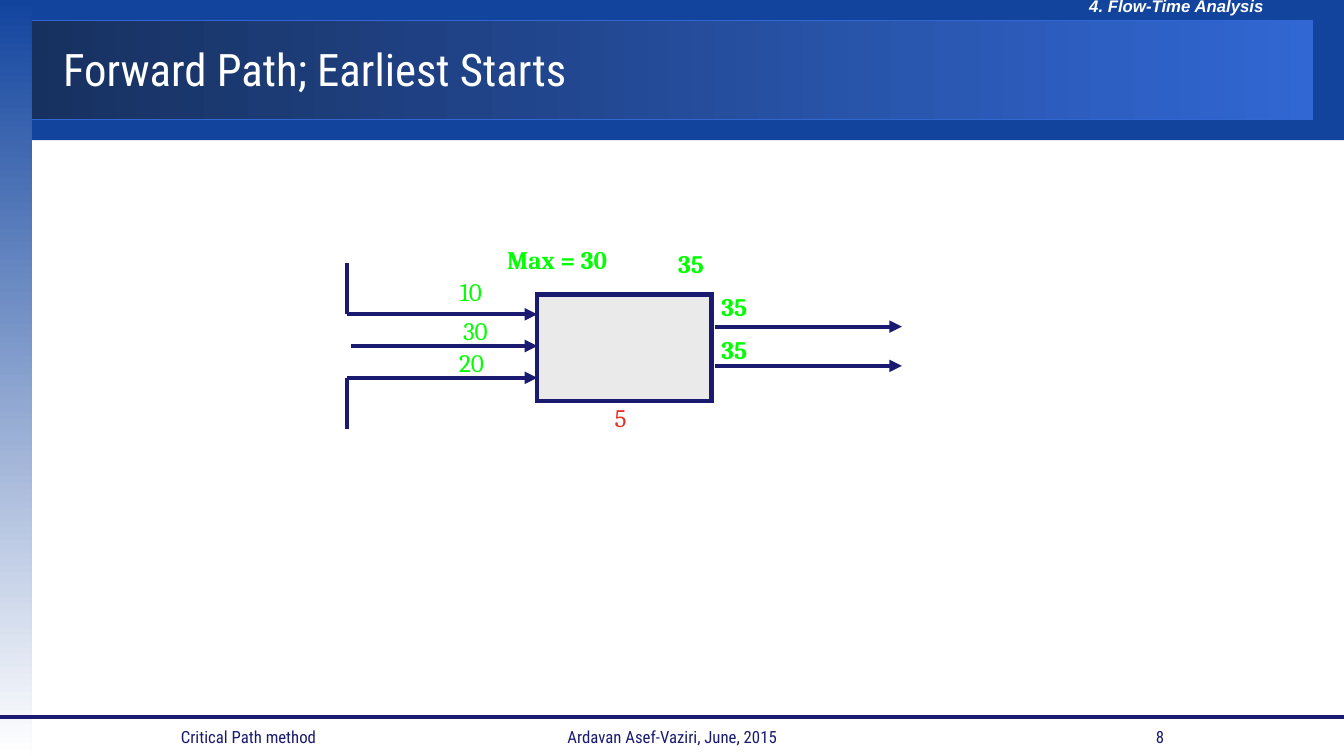
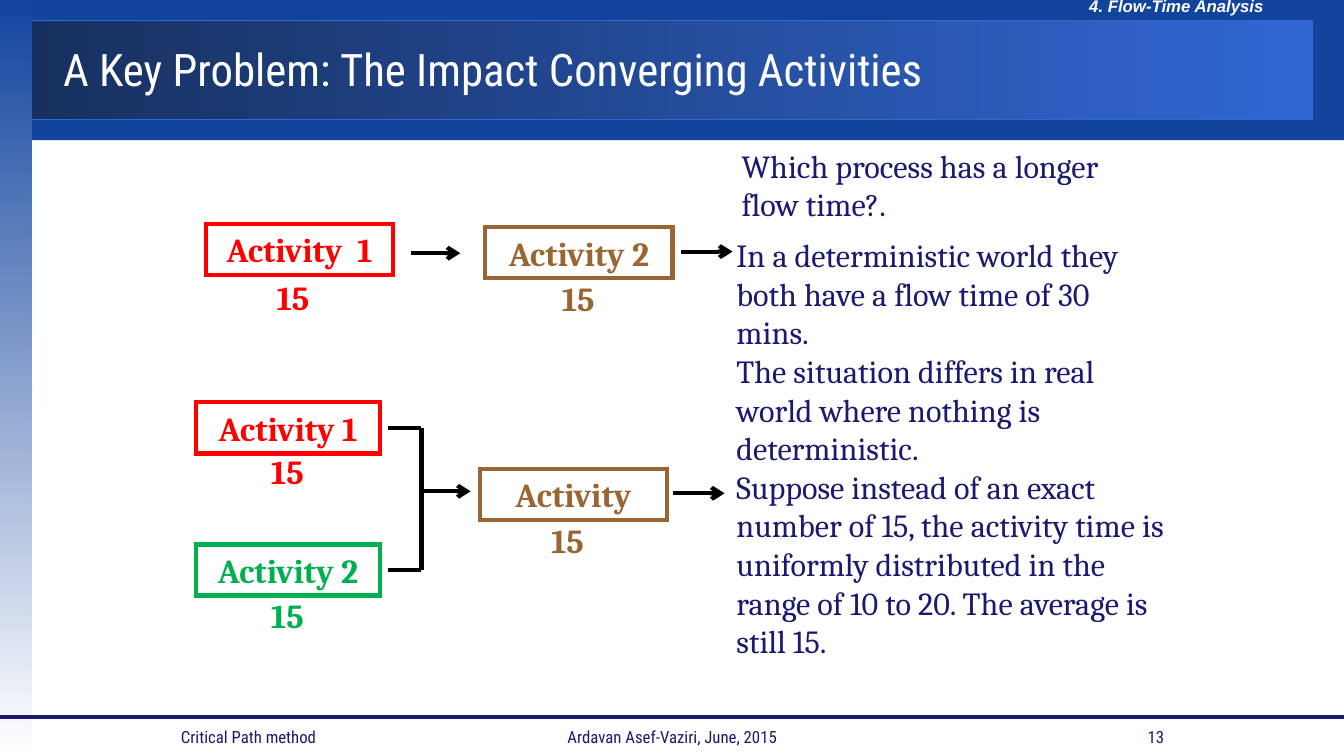
from lxml.etree import SubElement
from pptx import Presentation
from pptx.dml.color import RGBColor
from pptx.enum.shapes import MSO_CONNECTOR as Connector, MSO_SHAPE as Shape
from pptx.enum.text import MSO_ANCHOR as Anchor, PP_ALIGN as Align
from pptx.oxml.ns import qn
from pptx.util import Cm, Pt

SLIDE_WIDTH, SLIDE_HEIGHT = 33.87, 19.05

COLOURS = {
    "white": "FFFFFF",
    "black": "000000",
    "navy": "1A1A70",
    "band": "12449E",
    "title dark": "17305F",
    "title light": "3167D3",
    "box grey": "EAEAEA",
    "lime": "00FF00",
    "scarlet": "E72F21",
    "red": "FF0000",
    "brown": "996633",
    "green": "00B050",
}

STYLES = {
    "title": {"name": "Roboto Condensed", "size": Pt(32)},
    "course": {"name": "Arial", "size": Pt(12), "bold": True, "italic": True},
    "footer": {"name": "Roboto Condensed", "size": Pt(12)},
    "time": {"name": "Cambria", "size": Pt(18)},
    "strong time": {"name": "Cambria", "size": Pt(18), "bold": True},
    "activity": {"name": "Cambria", "size": Pt(24), "bold": True},
    "body": {"name": "Cambria", "size": Pt(23)},
}


def colour(name):
    return RGBColor.from_string(COLOURS[name])


# Building blocks

def write(shape, lines, style, ink, align=Align.LEFT, anchor=Anchor.TOP,
          wrap=True, gap=0):
    frame = shape.text_frame
    frame.word_wrap = wrap
    frame.vertical_anchor = anchor
    for index, line in enumerate(lines):
        paragraph = frame.paragraphs[0] if index == 0 else frame.add_paragraph()
        paragraph.alignment = align
        if index:
            paragraph.space_before = Pt(gap)
        run = paragraph.add_run()
        run.text = line
        for attribute, value in STYLES[style].items():
            setattr(run.font, attribute, value)
        run.font.color.rgb = colour(ink)


def add_text(slide, box, lines, style, ink, **options):
    shape = slide.shapes.add_textbox(*map(Cm, box))
    write(shape, lines, style, ink, **options)


def add_box(slide, box, fill=None, gradient=None, angle=0, line=None, width=3):
    shape = slide.shapes.add_shape(Shape.RECTANGLE, *map(Cm, box))
    shape.shadow.inherit = False
    if gradient:
        shape.fill.gradient()
        shape.fill.gradient_angle = angle
        for stop, name in zip(shape.fill.gradient_stops, gradient):
            stop.color.rgb = colour(name)
    elif fill:
        shape.fill.solid()
        shape.fill.fore_color.rgb = colour(fill)
    else:
        shape.fill.background()
    if line:
        shape.line.color.rgb = colour(line)
        shape.line.width = Pt(width)
        # Square corners
        outline = shape.element.spPr.find(qn("a:ln"))
        SubElement(outline, qn("a:miter"), lim="800000")
    else:
        shape.line.fill.background()
    return shape


def add_line(slide, start, end, ink, head=None):
    line = slide.shapes.add_connector(
        Connector.STRAIGHT, *map(Cm, (*start, *end)))
    line.line.color.rgb = colour(ink)
    line.line.width = Pt(3)
    properties = line.element.spPr
    if head:
        SubElement(properties.find(qn("a:ln")), qn("a:tailEnd"), type=head)
    SubElement(properties, qn("a:effectLst"))


# Parts shared by every slide

def add_frame(slide, title, number):
    # Header bands and side strip
    add_box(slide, (0.66, 0, 33.21, 3.53), fill="band")
    add_box(slide, (0.66, 0.52, 32.41, 2.5),
            gradient=("title dark", "title light"), line="title light", width=0.75)
    add_box(slide, (0, 0, 0.8, SLIDE_HEIGHT),
            gradient=("band", "white"), angle=270)
    add_text(slide, (27.2, -0.23, 6.6, 0.76), ["4. Flow-Time Analysis"],
             "course", "white")
    add_text(slide, (1.34, 0.53, 31.47, 2.39), [title], "title", "white",
             anchor=Anchor.MIDDLE)
    # Footer
    footer_top = 18.06
    add_line(slide, (0, footer_top), (SLIDE_WIDTH, footer_top), "navy")
    for left, width, text, align in (
        (4.31, 5.92, "Critical Path method", Align.LEFT),
        (12.92, 8.05, "Ardavan Asef-Vaziri, June, 2015", Align.CENTER),
        (23.67, 5.92, number, Align.RIGHT),
    ):
        add_text(slide, (left, footer_top, width, 1.02), [text], "footer",
                 "navy", align=align, anchor=Anchor.MIDDLE)


# Earliest start: three inputs, one activity, two outputs

def add_earliest_start(slide, left, top):
    def at(x, y):
        return left + x, top + y

    add_box(slide, (*at(4.8, 1.4), 4.39, 2.69), fill="box grey", line="navy")
    # Incoming and outgoing arrows
    upper, middle, lower = (1.9 + 0.8 * row for row in range(3))
    for corner, outside in ((upper, 0.61), (lower, 4.8)):
        add_line(slide, at(0, outside), at(0, corner), "navy")
    for x, y, end in ((0, upper, 4.8), (0.1, middle, 4.8), (0, lower, 4.8),
                      (9.29, 2.21, 13.99), (9.29, 3.2, 13.99)):
        add_line(slide, at(x, y), at(end, y), "navy", "triangle")
    # Times
    for x, y, width, lines, style, ink in (
        (2.6, 0.81, 1.3, ["10"], "time", "lime"),
        (2.68, 1.8, 1.3, ["30"], "time", "lime"),
        (2.58, 2.62, 1.3, ["20"], "time", "lime"),
        (3.79, 0, 3.3, ["Max = 30"], "strong time", "lime"),
        (6.5, 4, 0.9, ["5"], "time", "scarlet"),
        (8.1, 0.11, 1.3, ["35"], "strong time", "lime"),
        (9.19, 1.19, 1.3, ["35", "35"], "strong time", "lime"),
    ):
        height = 1.02 if len(lines) == 1 else 2.13
        add_text(slide, (*at(x, y), width, height), lines, style, ink,
                 wrap=False, gap=9.6)


# Activity networks

def add_activity(slide, left, top, width, name, ink, time_offset):
    shape = add_box(slide, (left, top, width, 1.29), line=ink)
    write(shape, [name], "activity", ink, align=Align.CENTER,
          anchor=Anchor.MIDDLE)
    across, down = time_offset
    add_text(slide, (left + across, top + down, 1.5, 1.27), ["15"],
             "activity", ink, wrap=False)


def add_network(slide, left, top, activities, lines):
    for x, y, *details in activities:
        add_activity(slide, left + x, top + y, *details)
    for x1, y1, x2, y2, head in lines:
        add_line(slide, (left + x1, top + y1), (left + x2, top + y2),
                 "black", head)


def add_serial_process(slide, left, top):
    add_network(slide, left, top, (
        (0, 0, 4.7, "Activity  1", "red", (1.52, 1.21)),
        (7.03, 0.08, 4.72, "Activity 2", "brown", (1.68, 1.16)),
    ), (
        (5.15, 0.74, 6.4, 0.74, "arrow"),
        (11.96, 0.7, 13.26, 0.7, "arrow"),
    ))


def add_converging_process(slide, left, top):
    pitch, branch, join = 3.58, 0.64, 5.67
    add_network(slide, left, top, (
        (0, 0, 4.62, "Activity 1", "red", (1.63, 1.11)),
        (0, pitch, 4.62, "Activity 2", "green", (1.63, 1.14)),
        (7.14, 1.67, 4.72, "Activity", "brown", (1.55, 1.17)),
    ), (
        (4.83, branch, join, branch, None),
        (4.83, branch + pitch, join, branch + pitch, None),
        (join, branch, join, branch + pitch, None),
        (join, 2.24, 6.91, 2.24, "arrow"),
        (12.02, 2.29, 13.31, 2.29, "arrow"),
    ))


def add_discussion(slide, left, top):
    add_text(slide, (left + 0.13, top, 10.82, 2.26),
             ["Which process has a longer flow time?."], "body", "navy")
    add_text(slide, (left, top + 2.25, 11.33, 12.09), [
        "In a deterministic world they both have a flow time of 30 mins.",
        "The situation differs in real world where nothing is deterministic.",
        "Suppose instead of an exact number of 15, the activity time is "
        "uniformly distributed in the range of 10 to 20. The average is "
        "still 15.",
    ], "body", "navy")


# Slides

def forward_path_slide(slide):
    add_frame(slide, "Forward Path; Earliest Starts", "8")
    add_earliest_start(slide, 8.74, 6.02)


def converging_slide(slide):
    add_frame(slide, "A Key Problem: The Impact Converging Activities", "13")
    add_serial_process(slide, 5.2, 5.64)
    add_converging_process(slide, 4.95, 10.14)
    add_discussion(slide, 18.31, 3.56)


def main():
    presentation = Presentation()
    presentation.slide_width = Cm(SLIDE_WIDTH)
    presentation.slide_height = Cm(SLIDE_HEIGHT)
    blank = presentation.slide_layouts[6]
    for build in (forward_path_slide, converging_slide):
        build(presentation.slides.add_slide(blank))
    presentation.save("out.pptx")


if __name__ == "__main__":
    main()
